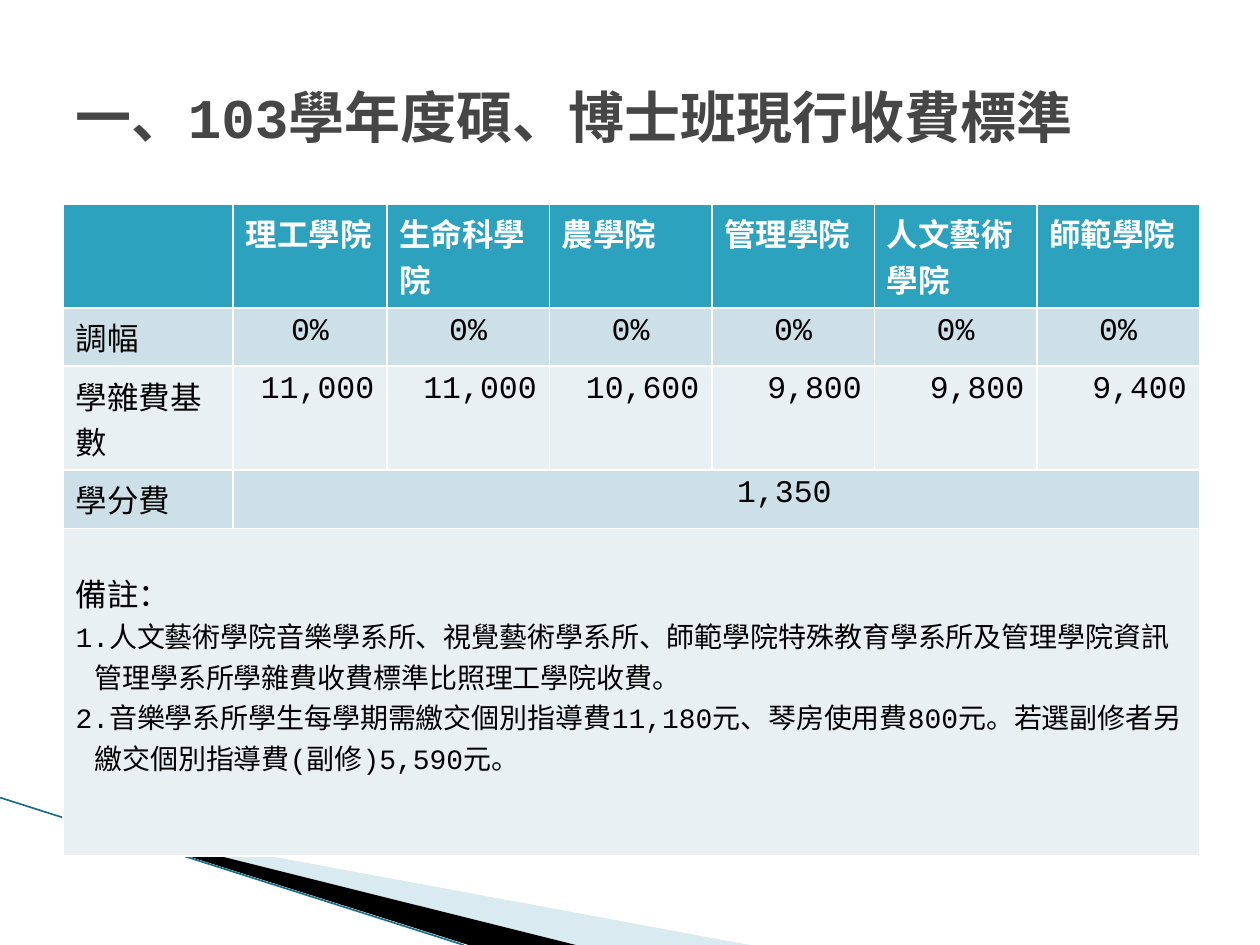
from lxml import etree
from pptx import Presentation
from pptx import util as u
from pptx.dml.color import RGBColor
from pptx.enum import shapes, text
from pptx.oxml import ns

FONT = "Courier New"
TITLE = "一、103學年度碩、博士班現行收費標準"
ROWS = [
    ["", "理工學院", "生命科學院", "農學院", "管理學院", "人文藝術學院", "師範學院"],
    ["調幅"] + ["0%"] * 6,
    ["學雜費基數", "11,000", "11,000", "10,600", "9,800", "9,800", "9,400"],
    ["學分費", "1,350"],
]
NOTES = [
    ("備註：", 18, 0),
    ("1.人文藝術學院音樂學系所、視覺藝術學系所、師範學院特殊教育學系所及管理學院資訊", 16, 0),
    ("管理學系所學雜費收費標準比照理工學院收費。", 16, 0.15),
    ("2.音樂學系所學生每學期需繳交個別指導費11,180元、琴房使用費800元。若選副修者另", 16, 0),
    ("繳交個別指導費(副修)5,590元。", 16, 0.15),
]
COLUMN_WIDTHS = [1.35, 1.22] + [1.29] * 5
ROW_HEIGHTS = [0.82, 0.46, 0.82, 0.46, 2.6]
ROW_FILLS = ["2DA2BF", "CDE0E8", "E8F0F4", "CDE0E8", "E8F0F4"]
ROW_ALIGNMENTS = [
    text.PP_ALIGN.LEFT, text.PP_ALIGN.CENTER, text.PP_ALIGN.RIGHT, text.PP_ALIGN.LEFT,
]
WEDGES = [
    ([(0.55, 6.5), (5.95, 7.5), (4.56, 7.5)], "A0CBDC", 40),
    ([(0.53, 6.49), (4.57, 7.5), (3.72, 7.5)], "000000", 100),
]


def paint(fill, color):
    """Fill solidly with a hex colour."""
    fill.solid()
    fill.fore_color.rgb = RGBColor.from_string(color)


def style(paragraph, size, color, bold=False):
    """Set the font of a whole paragraph."""
    font = paragraph.font
    font.name, font.size, font.bold = FONT, u.Pt(size), bold
    paint(font.fill, color)


def add_wedge(slide, points, color, opacity):
    """Draw one closed wedge of the corner decoration."""
    corners = [(u.Inches(x), u.Inches(y)) for x, y in points]
    builder = slide.shapes.build_freeform(*corners[0])
    builder.add_line_segments(corners[1:])
    wedge = builder.convert_to_shape()
    wedge.shadow.inherit = False
    wedge.line.fill.background()
    paint(wedge.fill, color)
    if opacity < 100:
        color_element = wedge.fill._xPr.find(".//" + ns.qn("a:srgbClr"))
        etree.SubElement(color_element, ns.qn("a:alpha"), val=str(opacity * 1000))


def add_edge(slide):
    """Draw the thin line along the corner decoration."""
    edge = slide.shapes.add_connector(
        shapes.MSO_CONNECTOR.STRAIGHT,
        u.Inches(0), u.Inches(6.33), u.Inches(3.68), u.Inches(7.5))
    edge.line.width = u.Pt(0.95)
    paint(edge.line.fill, "1A6F86")
    etree.SubElement(edge._element.spPr, ns.qn("a:effectLst"))


def add_fee_table(slide):
    """Build the fee table with its notes row."""
    table = slide.shapes.add_table(
        len(ROW_HEIGHTS), len(COLUMN_WIDTHS), u.Inches(0.5), u.Inches(1.62),
        u.Inches(sum(COLUMN_WIDTHS)), u.Inches(sum(ROW_HEIGHTS))).table
    for column, width in zip(table.columns, COLUMN_WIDTHS):
        column.width = u.Inches(width)
    for row, height, color in zip(table.rows, ROW_HEIGHTS, ROW_FILLS):
        row.height = u.Inches(height)
        for cell in row.cells:
            paint(cell.fill, color)

    for row_index, values in enumerate(ROWS):
        header = row_index == 0
        for column_index, value in enumerate(values):
            cell = table.cell(row_index, column_index)
            cell.text = value
            paragraph = cell.text_frame.paragraphs[0]
            if column_index:
                paragraph.alignment = ROW_ALIGNMENTS[row_index]
            style(paragraph, 18, "FFFFFF" if header else "000000", header)

    credit_fee = table.cell(3, 1)
    credit_fee.merge(table.cell(3, 6))
    credit_fee.margin_left = u.Inches(4)

    notes = table.cell(4, 0)
    notes.merge(table.cell(4, 6))
    notes.margin_top = u.Inches(0.33)
    notes.text = "\n".join(note for note, _, _ in NOTES)
    for paragraph, (_, size, indent) in zip(notes.text_frame.paragraphs, NOTES):
        if indent:
            paragraph._p.get_or_add_pPr().set("marL", str(u.Inches(indent)))
        style(paragraph, size, "000000")


def main():
    """Build and save the slide."""
    presentation = Presentation()
    presentation.slide_width, presentation.slide_height = u.Inches(10), u.Inches(7.5)
    slide = presentation.slides.add_slide(presentation.slide_layouts[5])
    for wedge in WEDGES:
        add_wedge(slide, *wedge)
    add_edge(slide)
    add_fee_table(slide)

    title = slide.shapes.title
    title.left, title.top = u.Inches(0.5), u.Inches(0.3)
    title.width, title.height = u.Inches(9), u.Inches(1.25)
    title.text_frame.text = TITLE
    title.text_frame.vertical_anchor = text.MSO_ANCHOR.MIDDLE
    paragraph = title.text_frame.paragraphs[0]
    paragraph.alignment = text.PP_ALIGN.LEFT
    style(paragraph, 32, "464646", True)
    presentation.save("out.pptx")


if __name__ == "__main__":
    main()
